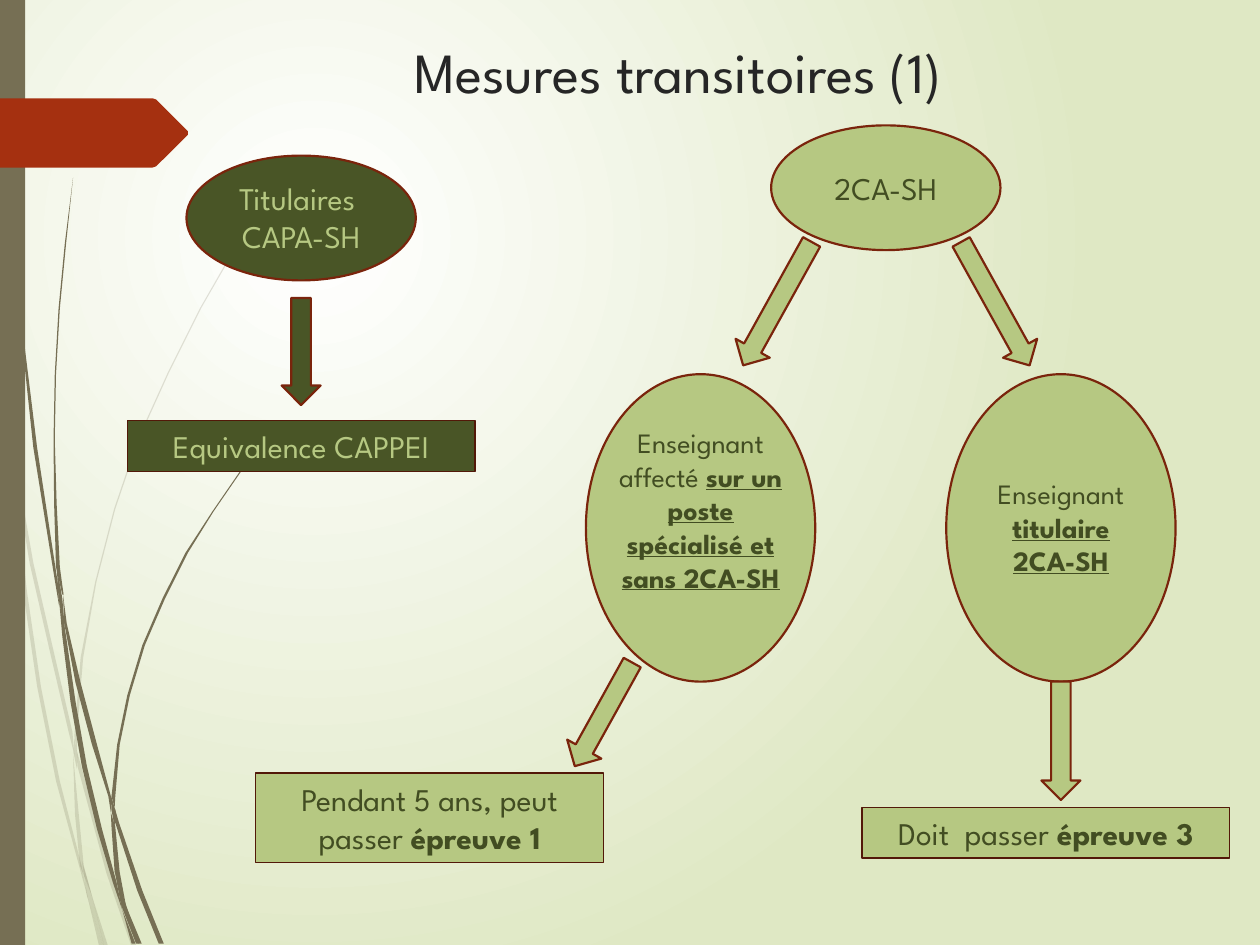
from lxml import etree
from pptx import Presentation
from pptx import util as u
from pptx.dml.color import RGBColor
from pptx.enum import shapes, text
from pptx.oxml.ns import qn

WHITE = RGBColor(0xFF, 0xFF, 0xFF)
MIST = RGBColor(0xDF, 0xE8, 0xC4)
BROWN = RGBColor(0x76, 0x6F, 0x54)
RUST = RGBColor(0xA5, 0x30, 0x10)
RUST_LINE = RGBColor(0x7A, 0x24, 0x0C)
BOX_LINE = RGBColor(0x52, 0x18, 0x08)
OLIVE = RGBColor(0x49, 0x55, 0x26)
LEAF = RGBColor(0xB6, 0xC8, 0x82)
MOSS = RGBColor(0x42, 0x4D, 0x22)
INK = RGBColor(0x26, 0x26, 0x26)
FONT = "League Spartan"

WIDTH, HEIGHT = 10, 7.5
OVAL_WIDTH, LABEL_WIDTH = 1.82, 1.51
CAPA, CA_SH, POSTED, HOLDER = 2.39, 7.03, 5.56, 8.42  # column centres
DARK, LIGHT = (OLIVE, LEAF), (LEAF, MOSS)  # fill, text

TITLE = [[("Mesures transitoires (1)", False)]]

# centre x, centre y, oval height, label height, size, scheme, paragraphs of (text, stressed)
OVALS = [
    (CAPA, 1.73, 0.99, 0.71, 18, DARK, [[("Titulaires ", False)], [("CAPA-SH", False)]]),
    (CA_SH, 1.49, 0.99, 0.4, 18, LIGHT, [[("2CA-SH", False)]]),
    (POSTED, 4.19, 2.44, 1.72, 16, LIGHT,
     [[("Enseignant affecté ", False), ("sur un poste spécialisé et sans 2CA-SH", True)]]),
    (HOLDER, 4.19, 2.44, 0.91, 16, LIGHT,
     [[("Enseignant ", False), ("titulaire 2CA-SH", True)]]),
]
# centre x, centre y, width, height, scheme, paragraphs
OUTCOMES = [
    (CAPA, 3.54, 2.76, 0.4, DARK, [[("Equivalence CAPPEI", False)]]),
    (3.41, 6.49, 2.76, 0.71, LIGHT, [[("Pendant 5 ans, peut passer ", False), ("épreuve 1", True)]]),
    (8.3, 6.61, 2.92, 0.4, LIGHT, [[("Doit  passer ", False), ("épreuve 3", True)]]),
]
# centre x, centre y, length, rotation, fill
ARROWS = [
    (CAPA, 2.79, 0.85, 0, OLIVE),
    (6.17, 2.41, 1.12, 29, LEAF),
    (7.9, 2.41, 1.12, -29, LEAF),
    (4.79, 5.67, 0.94, 29, LEAF),
    (HOLDER, 5.88, 0.94, 0, LEAF),
]
# grass blades: (x, y, thickness) along each centre line
PALE_BLADES = [
    [(0, 2.82, 0), (0.01, 2.99, 0.02), (0.06, 3.33, 0.02), (0.08, 3.5, 0)],
    [(0.1, 3.45, 0), (0.12, 3.7, 0.02), (0.25, 4.47, 0.03), (0.42, 5.21, 0.03),
     (0.56, 5.81, 0.03), (0.59, 5.99, 0)],
    [(0.61, 5.96, 0), (0.63, 6.08, 0.03), (0.86, 6.93, 0.03), (1.06, 7.5, 0.04)],
    [(0.73, 7.11, 0), (0.84, 7.5, 0.03)],
    [(0.08, 3.5, 0), (0.2, 4.7, 0.03), (0.31, 5.45, 0.03), (0.46, 6.2, 0.03),
     (0.64, 6.88, 0.02), (0.7, 7.14, 0)],
    [(0.58, 5.99, 0), (0.61, 6.46, 0.03), (0.65, 6.87, 0.03), (0.73, 7.11, 0)],
    [(2.17, 1.53, 0), (2.01, 1.75, 0.01), (1.86, 1.98, 0.01), (1.59, 2.45, 0.01),
     (1.34, 2.95, 0.01), (1.1, 3.48, 0.01), (0.91, 4.04, 0.01), (0.76, 4.62, 0.01),
     (0.65, 5.22, 0.02), (0.6, 5.84, 0.02), (0.61, 5.96, 0)],
    [(0.7, 7.14, 0), (0.8, 7.5, 0.03)],
    [(0.59, 5.86, 0), (0.6, 5.98, 0.03), (0.61, 6.1, 0)],
    [(0.65, 6.83, 0), (0.71, 7.11, 0.04), (0.82, 7.5, 0.01)],
]
DARK_BLADES = [
    [(0.03, 0, 0.01), (0.05, 1.1, 0.01), (0.14, 2.33, 0.01), (0.28, 3.55, 0.03),
     (0.45, 4.63, 0.02), (0.47, 4.81, 0)],
    [(0.5, 4.72, 0), (0.52, 4.95, 0.02), (0.62, 5.42, 0.04), (0.75, 5.91, 0.04),
     (0.87, 6.32, 0.02), (0.88, 6.45, 0)],
    [(0.91, 6.41, 0), (0.93, 6.53, 0.03), (1.11, 7.07, 0.04), (1.28, 7.49, 0.04)],
    [(0.47, 4.77, 0), (0.51, 5.05, 0.03), (0.58, 5.57, 0.04), (0.67, 6.08, 0.04),
     (0.79, 6.58, 0.04), (0.91, 7, 0.03), (0.97, 7.22, 0)],
    [(0.58, 1.41, 0), (0.52, 1.93, 0.01), (0.47, 2.45, 0.01), (0.44, 2.97, 0.01),
     (0.43, 3.49, 0.01), (0.44, 4, 0.02), (0.46, 4.5, 0.03), (0.5, 4.72, 0.01)],
    [(1, 7.19, 0), (1.11, 7.49, 0.03)],
    [(0.45, 4.49, 0), (0.48, 4.75, 0.03), (0.52, 5.05, 0)],
    [(2.16, 3.44, 0), (2.03, 3.59, 0.01), (1.91, 3.74, 0.01), (1.69, 4.06, 0.01),
     (1.48, 4.39, 0.02), (1.3, 4.75, 0.02), (1.14, 5.12, 0.02), (1.02, 5.52, 0.02),
     (0.94, 5.91, 0.02), (0.9, 6.32, 0.03), (0.91, 6.41, 0)],
    [(0.97, 7.22, 0), (1.06, 7.49, 0.03)],
    [(0.88, 6.45, 0), (0.9, 6.56, 0.03), (0.93, 6.92, 0.04), (1, 7.19, 0)],
    [(0.88, 6.31, 0), (0.9, 6.43, 0.03), (0.91, 6.56, 0)],
    [(0.91, 6.91, 0), (0.98, 7.18, 0.04), (1.09, 7.49, 0.02)],
]
TAG = [(0, 0.78), (1.21, 0.78), (1.24, 0.79), (1.49, 1.04), (1.49, 1.07),
       (1.24, 1.32), (1.21, 1.33), (0, 1.33)]


def paint(shape, fill, line=None, weight=1.25):
    shape.shadow.inherit = False
    shape.fill.solid()
    shape.fill.fore_color.rgb = fill
    if line is None:
        shape.line.fill.background()
    else:
        shape.line.color.rgb = line
        shape.line.width = u.Pt(weight)
    return shape


def centred(x, y, width, height):
    return [u.Inches(v) for v in (x - width / 2, y - height / 2, width, height)]


def write(shape, paragraphs, size, color, underline=False, anchor=text.MSO_ANCHOR.TOP):
    frame = shape.text_frame
    frame.word_wrap = True
    frame.vertical_anchor = anchor
    for i, runs in enumerate(paragraphs):
        paragraph = frame.add_paragraph() if i else frame.paragraphs[0]
        paragraph.alignment = text.PP_ALIGN.CENTER
        for words, stressed in runs:
            run = paragraph.add_run()
            run.text = words
            run.font.name, run.font.size = FONT, u.Pt(size)
            run.font.color.rgb = color
            run.font.bold = stressed
            run.font.underline = stressed and underline


def add_outline(slide, points, fill):
    start, *rest = [(u.Inches(x), u.Inches(y)) for x, y in points]
    builder = slide.shapes.build_freeform(*start)
    builder.add_line_segments(rest, close=True)
    return paint(builder.convert_to_shape(), fill)


def add_blade(slide, stations):
    left = [(x - w / 2, y) for x, y, w in stations]
    right = [(x + w / 2, y) for x, y, w in stations if w]
    return add_outline(slide, left + right[::-1], BROWN)


def add_background(slide):
    fill = slide.background.fill
    fill.gradient()
    for stop, color in zip(fill.gradient_stops, (WHITE, MIST)):
        stop.color.rgb = color
    gradient = slide.element.find(".//" + qn("a:gradFill"))
    gradient.remove(gradient.find(qn("a:lin")))
    circle = etree.SubElement(gradient, qn("a:path"), {"path": "circle"})
    etree.SubElement(circle, qn("a:fillToRect"),
                     {"l": "50000", "t": "50000", "r": "100000", "b": "100000"})


def add_scenery(slide):
    for stations in PALE_BLADES:
        blade = add_blade(slide, stations)
        color = blade.element.spPr.find(qn("a:solidFill"))[0]
        etree.SubElement(color, qn("a:alpha"), {"val": "20000"})
    for stations in DARK_BLADES:
        add_blade(slide, stations)
    bar = (0, 0, u.Inches(0.2), u.Inches(HEIGHT))
    paint(slide.shapes.add_shape(shapes.MSO_SHAPE.RECTANGLE, *bar), BROWN)
    add_outline(slide, TAG, RUST)


def main():
    deck = Presentation()
    deck.slide_width, deck.slide_height = u.Inches(WIDTH), u.Inches(HEIGHT)
    slide = deck.slides.add_slide(deck.slide_layouts[6])
    add = slide.shapes
    add_background(slide)
    add_scenery(slide)

    heading = add.add_textbox(*centred(5.38, 0.54, 8.49, 0.59))
    write(heading, TITLE, 32.4, INK)

    for x, y, height, label_height, size, (fill, ink), words in OVALS:
        oval = add.add_shape(shapes.MSO_SHAPE.OVAL, *centred(x, y, OVAL_WIDTH, height))
        paint(oval, fill, RUST_LINE)
        label = add.add_textbox(*centred(x, y, LABEL_WIDTH, label_height))
        write(label, words, size, ink, underline=True)

    for x, y, length, rotation, fill in ARROWS:
        arrow = add.add_shape(shapes.MSO_SHAPE.DOWN_ARROW, *centred(x, y, 0.31, length))
        paint(arrow, fill, RUST_LINE).rotation = rotation

    for x, y, width, height, (fill, ink), words in OUTCOMES:
        outcome = add.add_shape(shapes.MSO_SHAPE.RECTANGLE, *centred(x, y, width, height))
        paint(outcome, fill, BOX_LINE, 0.75)
        write(outcome, words, 18, ink, anchor=text.MSO_ANCHOR.MIDDLE)

    deck.save("out.pptx")


if __name__ == "__main__":
    main()
